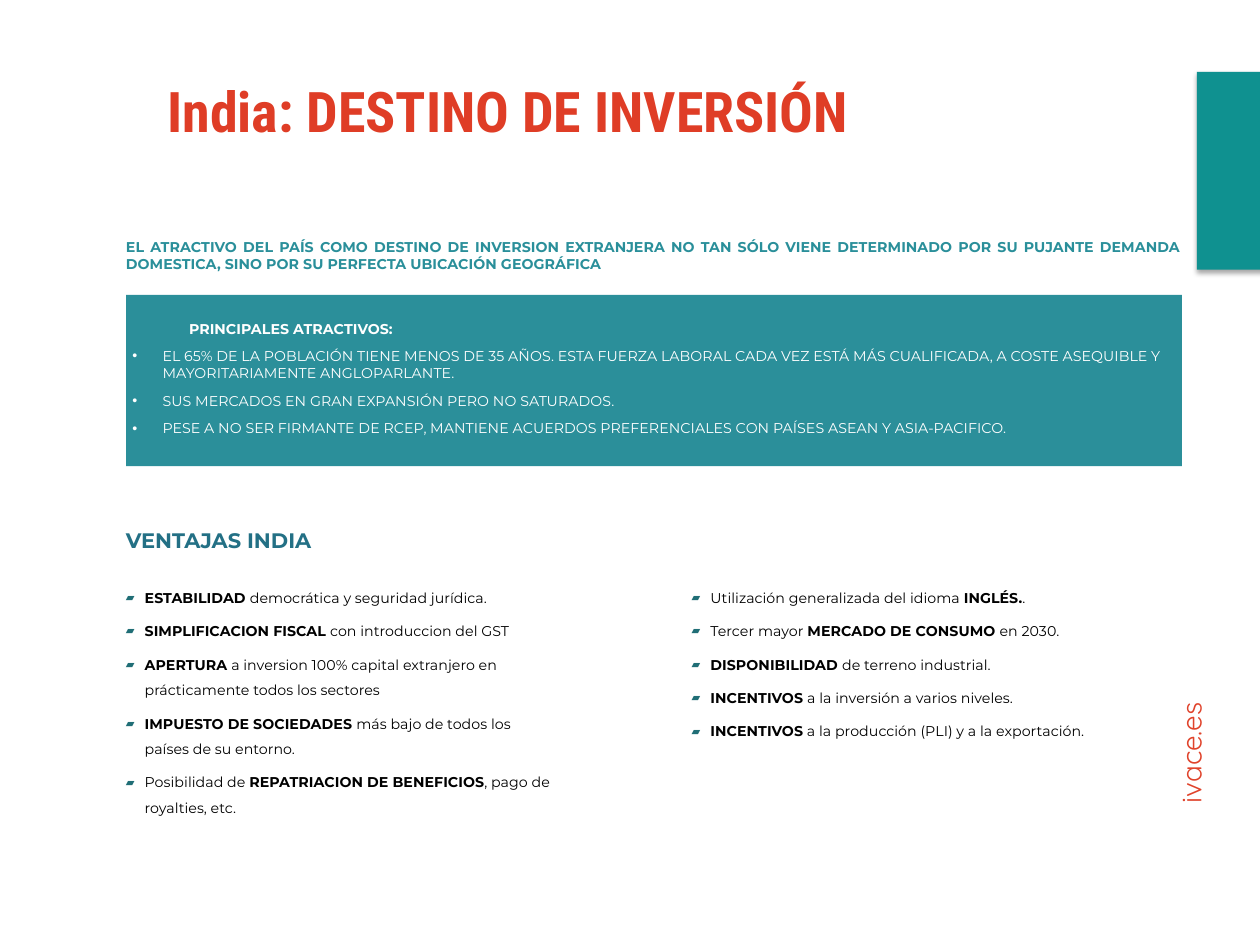
from dataclasses import dataclass

from lxml.etree import SubElement
from pptx import Presentation
from pptx.dml.color import RGBColor
from pptx.enum.shapes import MSO_SHAPE
from pptx.enum.text import MSO_ANCHOR, PP_ALIGN
from pptx.oxml.ns import qn
from pptx.util import Inches, Pt


@dataclass(frozen=True)
class Theme:
    """Colours, fonts and type sizes of the slide."""
    red: str = "DF3D26"
    web_red: str = "E0432B"
    teal: str = "2A8F9A"
    panel: str = "2B8F9A"
    tab: str = "0F9190"
    heading: str = "237085"
    marker: str = "206E76"
    black: str = "000000"
    white: str = "FFFFFF"
    body_font: str = "Montserrat"
    title_font: str = "Roboto Condensed"
    web_font: str = "Quicksand"
    title_size: float = 32
    web_size: float = 16
    heading_size: float = 12
    body_size: float = 8.1


THEME = Theme()
NO_INSETS = {"margin_left": 0, "margin_right": 0, "margin_top": 0, "margin_bottom": 0}
STATEMENT = (
    "**EL ATRACTIVO DEL PAÍS COMO DESTINO DE INVERSION EXTRANJERA NO TAN SÓLO VIENE "
    "DETERMINADO POR SU PUJANTE DEMANDA DOMESTICA, SINO POR SU PERFECTA UBICACIÓN GEOGRÁFICA**"
)
ATTRACTIONS = [
    "EL 65% DE LA POBLACIÓN TIENE MENOS DE 35 AÑOS. ESTA FUERZA LABORAL CADA VEZ ESTÁ "
    "MÁS CUALIFICADA, A COSTE ASEQUIBLE Y MAYORITARIAMENTE ANGLOPARLANTE.",
    "SUS MERCADOS EN GRAN EXPANSIÓN PERO NO SATURADOS.",
    "PESE A NO SER FIRMANTE DE RCEP, MANTIENE ACUERDOS PREFERENCIALES CON PAÍSES "
    "ASEAN Y ASIA-PACIFICO.",
]
ADVANTAGES = {
    0.9: [
        "**ESTABILIDAD **democrática y seguridad jurídica.",
        "**SIMPLIFICACION FISCAL **con introduccion del GST",
        "**APERTURA **a inversion 100% capital extranjero en prácticamente todos los sectores",
        "**IMPUESTO DE SOCIEDADES **más bajo de todos los países de su entorno.",
        "Posibilidad de **REPATRIACION DE BENEFICIOS**, pago de royalties, etc.",
    ],
    5.39: [
        "Utilización generalizada del idioma **INGLÉS.**.",
        "Tercer mayor **MERCADO DE CONSUMO **en 2030.",
        "**DISPONIBILIDAD **de terreno industrial.",
        "**INCENTIVOS **a la inversión a varios niveles.",
        "**INCENTIVOS** a la producción (PLI) y a la exportación.",
    ],
}


def apply_format(target, values):
    """Set each attribute named in values on target."""
    for name, value in values.items():
        setattr(target, name, value)


def set_indent(paragraph, left, first=0):
    """Set the left margin and first-line indent in inches."""
    properties = paragraph._p.get_or_add_pPr()
    properties.set("marL", str(Inches(left)))
    properties.set("indent", str(Inches(first)))


def set_bullet(paragraph, symbol, color, percent=100):
    """Give a paragraph a coloured bullet."""
    properties = paragraph._p.get_or_add_pPr()
    SubElement(SubElement(properties, qn("a:buClr")), qn("a:srgbClr"), val=color)
    SubElement(properties, qn("a:buSzPct"), val=str(percent * 1000))
    SubElement(properties, qn("a:buFont"), typeface="Arial")
    SubElement(properties, qn("a:buChar"), char=symbol)


def write_text(paragraph, marked, color, size=THEME.body_size, font=THEME.body_font):
    """Write runs, with bold between double asterisks."""
    for order, words in enumerate(marked.split("**")):
        if words:
            run = paragraph.add_run()
            run.text = words
            apply_format(run.font, {"name": font, "size": Pt(size), "bold": order % 2 == 1})
            run.font.color.rgb = RGBColor.from_string(color)


def next_paragraph(frame):
    """Return the unused first paragraph or a new one."""
    first = frame.paragraphs[0]
    return frame.add_paragraph() if first.runs else first


def add_frame(slide, box, **values):
    """Add a wrapping text frame."""
    frame = slide.shapes.add_textbox(*map(Inches, box)).text_frame
    apply_format(frame, {"word_wrap": True, **values})
    return frame


def add_block(slide, color):
    """Return a function that adds a plain filled rectangle."""
    def place(*box):
        """Add the rectangle at the given place."""
        block = slide.shapes.add_shape(MSO_SHAPE.RECTANGLE, *map(Inches, box))
        block.shadow.inherit = False
        block.fill.solid()
        block.fill.fore_color.rgb = RGBColor.from_string(color)
        block.line.fill.background()
        return block
    return place


def add_side_tab(slide):
    """Add the teal tab at the right edge with its soft shadow."""
    tab = add_block(slide, THEME.tab)(9.5, 0.57, 0.6, 1.57)
    effects = tab._element.spPr.find(qn("a:effectLst"))
    shadow = SubElement(effects, qn("a:outerShdw"), blurRad=str(Pt(3.1)),
                        dist=str(Pt(1.8)), dir="5400000", rotWithShape="0")
    tint = SubElement(shadow, qn("a:srgbClr"), val=THEME.black)
    SubElement(tint, qn("a:alpha"), val="35000")


def add_attractions(slide):
    """Add the panel of main attractions."""
    panel = add_block(slide, THEME.panel)(1, 2.34, 8.38, 1.36)
    frame = panel.text_frame
    apply_format(frame, {**NO_INSETS, "margin_top": Inches(0.2), "word_wrap": True,
                         "vertical_anchor": MSO_ANCHOR.TOP})
    heading = next_paragraph(frame)
    set_indent(heading, 0.5)
    apply_format(heading, {"alignment": PP_ALIGN.LEFT, "space_after": Pt(3)})
    write_text(heading, "**PRINCIPALES ATRACTIVOS:**", THEME.white)
    for attraction in ATTRACTIONS:
        item = next_paragraph(frame)
        set_indent(item, 0.29, -0.24)
        set_bullet(item, "•", THEME.white)
        apply_format(item, {"alignment": PP_ALIGN.LEFT, "space_before": Pt(3),
                            "space_after": Pt(3)})
        write_text(item, attraction, THEME.white)


def add_advantages(slide, left, advantages):
    """Add one column of advantages."""
    frame = add_frame(slide, (left, 4.56, 3.58, 2.03))
    for advantage in advantages:
        item = next_paragraph(frame)
        set_indent(item, 0.15, -0.15)
        set_bullet(item, "▰", THEME.marker, 80)
        apply_format(item, {"level": 1, "line_spacing": 1.5, "space_after": Pt(4.5)})
        write_text(item, advantage, THEME.black)


def main():
    """Build and save the slide."""
    deck = Presentation()
    apply_format(deck, {"slide_width": Inches(10), "slide_height": Inches(7.5)})
    slide = deck.slides.add_slide(deck.slide_layouts[6])

    website = slide.shapes.add_textbox(*map(Inches, (8.45, 4.91, 2.38, 0.75)))
    website.rotation = 270
    website.text_frame.word_wrap = True
    write_text(website.text_frame.paragraphs[0], "ivace.es", THEME.web_red,
               THEME.web_size, THEME.web_font)

    title = add_frame(slide, (1.23, 0.48, 8.18, 0.71), vertical_anchor=MSO_ANCHOR.BOTTOM)
    write_text(title.paragraphs[0], "**India: DESTINO DE INVERSIÓN**", THEME.red,
               THEME.title_size, THEME.title_font)

    statement = add_frame(slide, (1, 1.89, 8.37, 0.27), **NO_INSETS).paragraphs[0]
    statement.alignment = PP_ALIGN.JUSTIFY
    write_text(statement, STATEMENT, THEME.teal)

    add_attractions(slide)
    add_side_tab(slide)

    heading = add_frame(slide, (0.9, 4.14, 3.23, 0.3))
    write_text(heading.paragraphs[0], "**VENTAJAS INDIA**", THEME.heading, THEME.heading_size)
    for left, advantages in ADVANTAGES.items():
        add_advantages(slide, left, advantages)

    deck.save("out.pptx")


if __name__ == "__main__":
    main()
